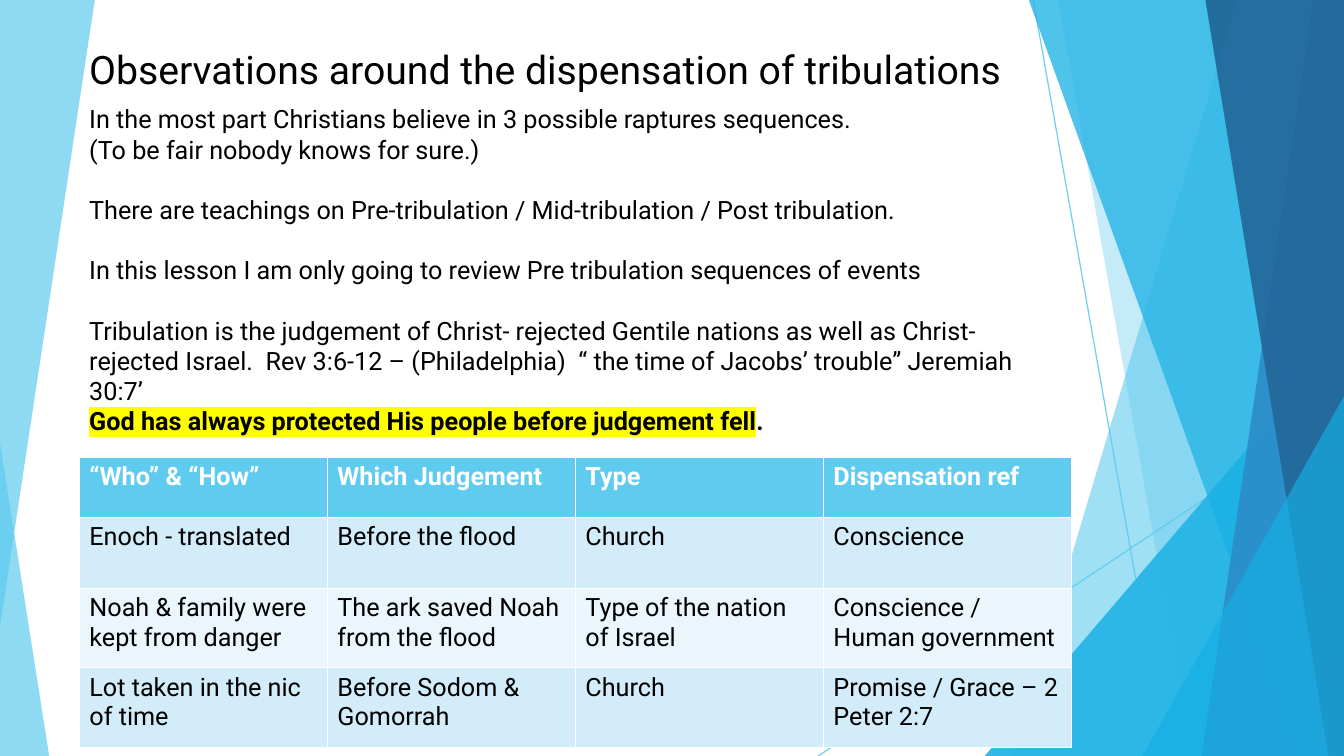
"""Build a slide on tribulation and judgement, with a table over blue facets."""
from lxml.etree import SubElement
from pptx import Presentation
from pptx.dml.color import RGBColor
from pptx.enum.shapes import MSO_CONNECTOR as CONNECTOR, MSO_SHAPE as SHAPE
from pptx.oxml.ns import qn
from pptx.util import Cm, Pt

COLORS = {
    "sky": "5FCBEF", "cyan": "17B0E4", "blue": "2E83C3", "navy": "226292",
    "pale": "D2ECF9", "paler": "EAF6FC", "black": "000000", "white": "FFFFFF",
    "yellow": "FFFF00",
}
FONT = "Roboto"
WIDTH, HEIGHT = 33.87, 19.05


def tint(shape, fill, color, opacity):
    """Give a fill a colour and an opacity in percent."""
    fill.solid()
    fill.fore_color.rgb = RGBColor.from_string(COLORS[color])
    value = shape._element.spPr.find(".//" + qn("a:srgbClr"))
    SubElement(value, qn("a:alpha"), val=str(opacity * 1000))


def style(paragraph, size, color="black", bold=False):
    """Set the font of a paragraph."""
    paragraph.font.name = FONT
    paragraph.font.size = Pt(size)
    paragraph.font.bold = bold
    paragraph.font.color.rgb = RGBColor.from_string(COLORS[color])


presentation = Presentation()
presentation.slide_width, presentation.slide_height = Cm(WIDTH), Cm(HEIGHT)
slide = presentation.slides.add_slide(presentation.slide_layouts[6])
shapes = slide.shapes

rays = [(26.04, 0, 29.41, HEIGHT), (WIDTH, 10.24, 20.62, HEIGHT)]
right_facets = [
    ("band", 31.19, 25.5, "sky", 36),
    ("band", 26.67, 30.05, "sky", 20),
    ("triangle", 24.82, 8.46, "cyan", 66),
    ("band", 25.93, 32.79, "cyan", 50),
    ("band", 33.1, 30.28, "blue", 70),
    ("band", 30.38, 33.48, "navy", 80),
    ("triangle", 28.8, 9.98, "cyan", 66),
]

for layer in range(2):
    for start_x, start_y, end_x, end_y in rays:
        ray = shapes.add_connector(
            CONNECTOR.STRAIGHT, Cm(start_x), Cm(start_y), Cm(end_x), Cm(end_y))
        ray.line.width = Pt(0.75)
        tint(ray, ray.line.fill, "sky", 70)
        SubElement(ray._element.spPr, qn("a:effectLst"))
    for kind, first, second, color, opacity in right_facets:
        if kind == "band":
            builder = shapes.build_freeform(Cm(first), 0)
            builder.add_line_segments([
                (Cm(WIDTH), 0), (Cm(WIDTH), Cm(HEIGHT)), (Cm(second), Cm(HEIGHT))])
            facet = builder.convert_to_shape()
        else:
            facet = shapes.add_shape(
                SHAPE.ISOSCELES_TRIANGLE, Cm(first), Cm(second),
                Cm(WIDTH - first), Cm(HEIGHT - second))
            facet.adjustments[0] = 1
        facet.shadow.inherit = False
        facet.line.fill.background()
        tint(facet, facet.fill, color, opacity)

left_triangle = shapes.add_shape(
    SHAPE.ISOSCELES_TRIANGLE, 0, Cm(11.15), Cm(1.24), Cm(7.9))
left_triangle.adjustments[0] = 0
builder = shapes.build_freeform(0, 0)
builder.add_line_segments([(Cm(2.39), 0), (0, Cm(15.8))])
for facet in (left_triangle, builder.convert_to_shape()):
    facet.shadow.inherit = False
    facet.line.fill.background()
    tint(facet, facet.fill, "sky", 70)

title = shapes.add_textbox(Cm(2), Cm(1.02), Cm(24.64), Cm(1.45)).text_frame
title.word_wrap = True
title.text = "Observations around the dispensation of tribulations"
style(title.paragraphs[0], 28)

body = shapes.add_textbox(Cm(2), Cm(2.49), Cm(24.64), Cm(10.26)).text_frame
body.word_wrap = True
statements = [
    ("In the most part Christians believe in 3 possible raptures sequences.", 0),
    ("(To be fair nobody knows for sure.)", 21.5),
    ("There are teachings on Pre-tribulation / Mid-tribulation / Post tribulation.", 21.5),
    ("In this lesson I am only going to review Pre tribulation sequences of events", 21.5),
    ("Tribulation is the judgement of Christ- rejected Gentile nations as well as "
     "Christ-rejected Israel.  Rev 3:6-12 – (Philadelphia)  “ the time of Jacobs’ "
     "trouble” Jeremiah 30:7’", 0),
]
paragraph = body.paragraphs[0]
for text, gap in statements:
    paragraph.text = text
    paragraph.space_after = Pt(gap)
    style(paragraph, 18)
    paragraph = body.add_paragraph()
style(paragraph, 18, bold=True)
key_run = paragraph.add_run()
key_run.text = "God has always protected His people before judgement fell"
highlight = SubElement(key_run._r.get_or_add_rPr(), qn("a:highlight"))
SubElement(highlight, qn("a:srgbClr"), val=COLORS["yellow"])
paragraph.add_run().text = "."

rows = [
    ("“Who” & “How”", "Which Judgement", "Type", "Dispensation ref"),
    ("Enoch - translated", "Before the flood", "Church", "Conscience"),
    ("Noah & family were kept from danger", "The ark saved Noah from the flood",
     "Type of the nation of Israel", "Conscience / Human government"),
    ("Lot taken in the nic of time", "Before Sodom & Gomorrah", "Church",
     "Promise / Grace – 2 Peter 2:7"),
]
row_heights = [1.5, 1.8, 2, 2]
row_fills = ["sky", "pale", "paler", "pale"]
table = shapes.add_table(
    len(rows), 4, Cm(2), Cm(11.53), Cm(25), Cm(sum(row_heights))).table
for column in table.columns:
    column.width = Cm(6.25)
for row_index, texts in enumerate(rows):
    table.rows[row_index].height = Cm(row_heights[row_index])
    header = row_index == 0
    for cell, text in zip(table.rows[row_index].cells, texts):
        cell.text = text
        cell.fill.solid()
        cell.fill.fore_color.rgb = RGBColor.from_string(COLORS[row_fills[row_index]])
        style(cell.text_frame.paragraphs[0], 18, "white" if header else "black", header)

presentation.save("out.pptx")
